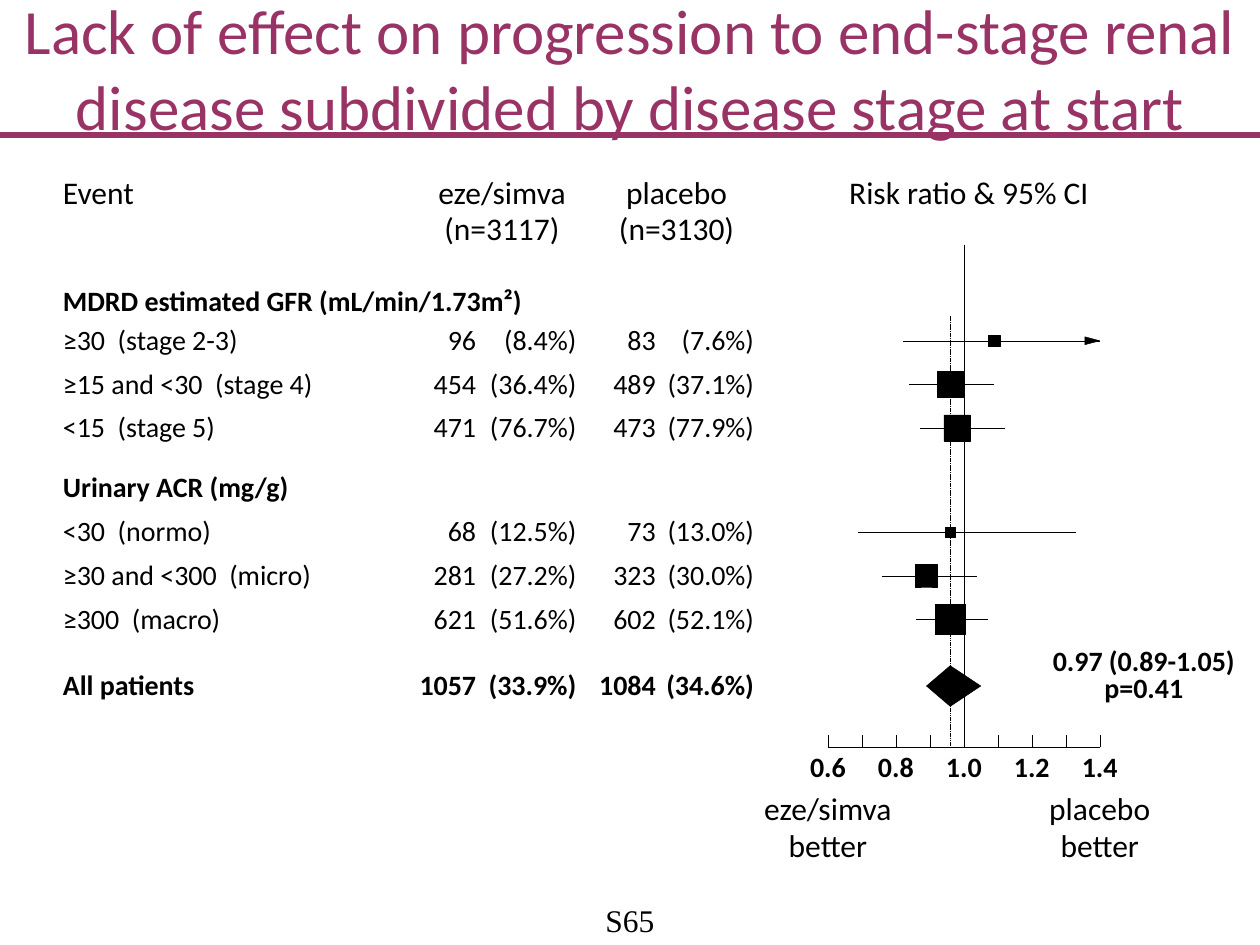
from dataclasses import dataclass

from lxml.etree import SubElement
from pptx import Presentation
from pptx.dml.color import RGBColor
from pptx.enum.dml import MSO_LINE
from pptx.enum.shapes import MSO_CONNECTOR, MSO_SHAPE
from pptx.enum.text import MSO_ANCHOR, MSO_AUTO_SIZE, PP_ALIGN
from pptx.oxml.ns import qn
from pptx.util import Cm, Pt


@dataclass(frozen=True)
class Theme:
    ink: RGBColor = RGBColor(0, 0, 0)
    plum: RGBColor = RGBColor(0x99, 0x33, 0x66)
    font: str = "Calibri"
    serif: str = "Times New Roman"
    title: int = 36
    head: int = 18
    body: int = 16
    hair: float = 0.25
    rule: float = 3


@dataclass(frozen=True)
class Box:
    x: float
    y: float
    w: float
    h: float


THEME = Theme()
LEFT, MID, RIGHT = PP_ALIGN.LEFT, PP_ALIGN.CENTER, PP_ALIGN.RIGHT
PITCH = 0.88  # between rows of a group
HALF = 0.37  # from the top of a row to its middle
TOTAL = 9.98  # top of the row for all patients
MEAN, LOW, HIGH = 0.96, 0.89, 1.05  # overall ratio and its interval

# Group: heading, its top, top of first row, rows
# Row: label, counts and shares, ratio, low, high, marker size
GROUPS = [
    ("MDRD estimated GFR (mL/min/1.73m²)", 2.24, 3.02, [
        ("≥30  (stage 2-3)", ("96", "(8.4%)", "83", "(7.6%)"), 1.09, 0.82, 1.4, 0.23),
        ("≥15 and <30  (stage 4)", ("454", "(36.4%)", "489", "(37.1%)"), 0.96, 0.84, 1.09, 0.53),
        ("<15  (stage 5)", ("471", "(76.7%)", "473", "(77.9%)"), 0.98, 0.87, 1.12, 0.53),
    ]),
    ("Urinary ACR (mg/g)", 5.99, 6.88, [
        ("<30  (normo)", ("68", "(12.5%)", "73", "(13.0%)"), 0.96, 0.69, 1.33, 0.2),
        ("≥30 and <300  (micro)", ("281", "(27.2%)", "323", "(30.0%)"), 0.89, 0.76, 1.04, 0.45),
        ("≥300  (macro)", ("621", "(51.6%)", "602", "(52.1%)"), 0.96, 0.86, 1.07, 0.61),
    ]),
]


def style(frame, text, size=THEME.body, bold=False, color=THEME.ink,
          font=THEME.font, align=LEFT):
    """Fill a text frame, one paragraph a line."""
    frame.word_wrap = True
    frame.auto_size = MSO_AUTO_SIZE.NONE
    for i, line in enumerate(text.split("\n")):
        para = frame.paragraphs[0] if i == 0 else frame.add_paragraph()
        para.alignment = align
        run = para.add_run()
        run.text = line
        run.font.name, run.font.size, run.font.bold = font, Pt(size), bold
        run.font.color.rgb = color


def write(slide, text, x, y, w, h=0.69, **look):
    """Add text; x is its left edge, centre or right edge, by alignment."""
    share = {LEFT: 0, MID: 0.5, RIGHT: 1}[look.get("align", LEFT)]
    frame = slide.shapes.add_textbox(Cm(x - w * share), Cm(y), Cm(w), Cm(h)).text_frame
    frame.margin_left = frame.margin_right = frame.margin_top = frame.margin_bottom = 0
    style(frame, text, **look)


def draw(slide, x1, y1, x2, y2, color=THEME.ink, width=THEME.hair, dash=None):
    line = slide.shapes.add_connector(
        MSO_CONNECTOR.STRAIGHT, Cm(x1), Cm(y1), Cm(x2), Cm(y2))
    line.line.color.rgb = color
    line.line.width = Pt(width)
    if dash:
        line.line.dash_style = dash
    SubElement(line.element.spPr, qn("a:effectLst"))


def paint(shape):
    shape.shadow.inherit = False
    shape.fill.solid()
    shape.fill.fore_color.rgb = THEME.ink
    shape.line.color.rgb = THEME.ink
    shape.line.width = Pt(THEME.hair)


def outline(slide, points):
    first, *rest = [(Cm(x), Cm(y)) for x, y in points]
    form = slide.shapes.build_freeform(*first)
    form.add_line_segments(rest, close=True)
    paint(form.convert_to_shape())


def banner(slide, box):
    """Title with the rule below it."""
    title = slide.shapes.title
    title.left, title.top, title.width, title.height = map(
        Cm, (box.x, box.y, box.w, box.h))
    title.text_frame.vertical_anchor = MSO_ANCHOR.MIDDLE
    style(title.text_frame,
          "Lack of effect on progression to end-stage renal disease "
          "subdivided by disease stage at start",
          size=THEME.title, color=THEME.plum, align=MID)
    base = box.y + box.h
    draw(slide, box.x, base, box.x + box.w, base, THEME.plum, THEME.rule)


def events(slide, box):
    """Event counts and shares by arm."""
    def row(label, cells, top, bold=False):
        write(slide, label, box.x, box.y + top, 6.5, bold=bold)
        edges = (8.33, 10.35, 11.95, 13.93)
        widths = (1.3, 1.8) * 2
        for cell, edge, width in zip(cells, edges, widths):
            write(slide, cell, box.x + edge, box.y + top, width,
                  bold=bold, align=RIGHT)

    # Column heads
    write(slide, "Event", box.x, box.y, 2, 0.86, size=THEME.head)
    for mid, arm, count in ((8.85, "eze/simva", "(n=3117)"),
                            (12.37, "placebo", "(n=3130)")):
        for text, top in ((arm, 0), (count, 0.74)):
            write(slide, text, box.x + mid, box.y + top, 2.9, 0.86,
                  size=THEME.head, align=MID)

    # Groups and total
    for name, top, start, rows in GROUPS:
        write(slide, name, box.x, box.y + top, 10.5, bold=True)
        for i, (label, cells, *_) in enumerate(rows):
            row(label, cells, start + i * PITCH)
    row("All patients", ("1057", "(33.9%)", "1084", "(34.6%)"), TOTAL, True)


def forest(slide, box):
    """Risk ratios on an axis from 0.6 to 1.4 along the base of the box."""
    def at(ratio):
        return box.x + (ratio - 0.6) / 0.8 * box.w

    base, end = box.y + box.h, box.x + box.w
    write(slide, "Risk ratio & 95% CI", box.x + 0.43, box.y, 5.4, 0.86,
          size=THEME.head)

    # Markers and intervals
    for _, _, start, rows in GROUPS:
        for i, (_, _, ratio, low, high, size) in enumerate(rows):
            y = box.y + start + i * PITCH + HALF
            paint(slide.shapes.add_shape(
                MSO_SHAPE.RECTANGLE, Cm(at(ratio) - size / 2), Cm(y - size / 2),
                Cm(size), Cm(size)))
            draw(slide, at(low), y, at(high), y)
            if high == 1.4:  # runs off the scale
                outline(slide, [(end, y), (end - 0.3, y - 0.08), (end - 0.3, y + 0.08)])

    # Overall result
    y = box.y + TOTAL + HALF
    outline(slide, [(at(MEAN), y - 0.41), (at(HIGH), y),
                    (at(MEAN), y + 0.41), (at(LOW), y)])
    for text, top in (("0.97 (0.89-1.05)", 9.5), ("p=0.41", 10.03)):
        write(slide, text, box.x + 6.37, box.y + top, 3.9, bold=True, align=MID)

    # Lines of no effect and of the overall ratio
    draw(slide, at(1), box.y + 1.45, at(1), base - 0.2)
    draw(slide, at(MEAN), box.y + 2.9, at(MEAN), base, dash=MSO_LINE.SQUARE_DOT)

    # Axis
    draw(slide, box.x, base, end, base)
    for i in range(9):
        ratio = 0.6 + i / 10
        draw(slide, at(ratio), base, at(ratio), base - 0.25)
        if i % 2 == 0:
            write(slide, f"{ratio:.1f}", at(ratio), base + 0.05, 1.2,
                  bold=True, align=MID)
    for arm, x in (("eze/simva", box.x), ("placebo", end)):
        write(slide, f"{arm}\nbetter", x, base + 0.84, 3, 1.63,
              size=THEME.head, align=MID)


def main():
    deck = Presentation()
    deck.slide_width, deck.slide_height = Cm(25.4), Cm(19.05)
    slide = deck.slides.add_slide(deck.slide_layouts[5])
    banner(slide, Box(0, 0, 25.4, 2.72))
    events(slide, Box(1.27, 3.48, 14, 10.67))
    forest(slide, Box(16.69, 3.48, 5.48, 11.58))
    write(slide, "S65", 12.7, 18.16, 2, 0.76, size=THEME.head,
          font=THEME.serif, align=MID)
    deck.save("out.pptx")


if __name__ == "__main__":
    main()
